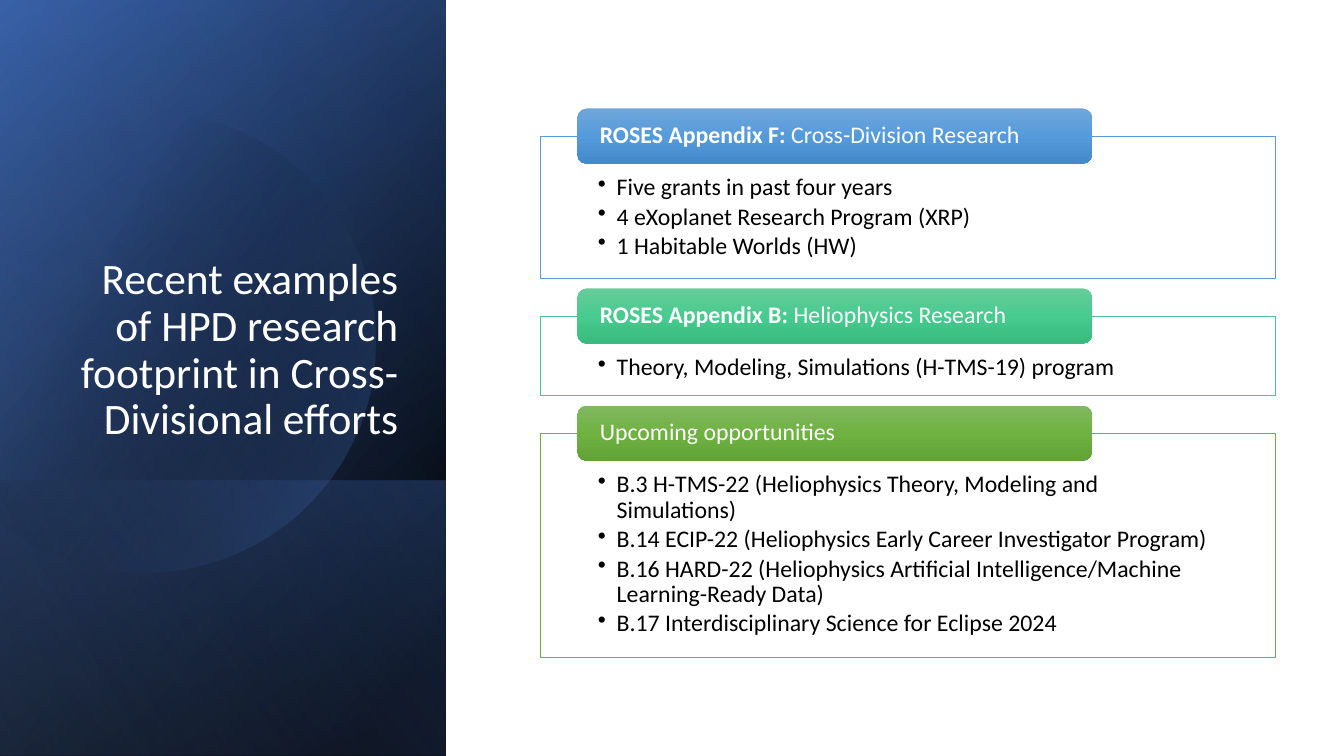
from dataclasses import dataclass
from math import acos, cos, sin

from lxml.etree import SubElement
from pptx import Presentation
from pptx.dml.color import RGBColor
from pptx.enum.shapes import MSO_SHAPE as Shape
from pptx.enum.text import MSO_ANCHOR as Anchor, MSO_AUTO_SIZE as AutoSize, PP_ALIGN as Align
from pptx.oxml.ns import qn
from pptx.util import Pt


@dataclass(frozen=True)
class Theme:
    font: str = "Calibri"
    title_size: float = 31
    text_size: float = 17
    white: str = "FFFFFF"
    black: str = "000000"
    navy: str = "2F5597"
    blue: str = "4472C4"
    pale_blue: str = "8FAADC"
    cross_division: tuple = ("5B9BD5", "71A6DB", "559BDB", "448ACA")
    heliophysics: tuple = ("4DC58D", "67CC9A", "47CB8E", "39BB7F")
    upcoming: tuple = ("70AD47", "81B861", "6FB242", "62A336")


theme = Theme()


def paint_gradient(shape, angle, stops):
    """Fill without outline; angle runs clockwise, stops are (percent, colour, opacity percent)."""
    shape.shadow.inherit = False
    shape.line.fill.background()
    shape.fill.gradient()
    shape.fill.gradient_angle = -angle % 360
    stop_list = shape._element.spPr.find(qn("a:gradFill")).find(qn("a:gsLst"))
    for old_stop in list(stop_list):
        stop_list.remove(old_stop)
    for percent, colour, opacity in stops:
        stop = SubElement(stop_list, qn("a:gs"), pos=str(percent * 1000))
        color = SubElement(stop, qn("a:srgbClr"), val=colour)
        if opacity < 100:
            SubElement(color, qn("a:alpha"), val=str(opacity * 1000))


def style_paragraph(paragraph, size, colour):
    paragraph.line_spacing = 0.9
    paragraph.font.name = theme.font
    paragraph.font.size = Pt(size)
    paragraph.font.color.rgb = RGBColor.from_string(colour)


prs = Presentation()
prs.slide_width, prs.slide_height = Pt(960), Pt(540)
slide = prs.slides.add_slide(prs.slide_layouts[5])
shapes = slide.shapes

# Side panel: layered gradients, with a disc cut off by the slide edge
PANEL_WIDTH = 318.5
FOOT_TOP = 343
panel_layers = [
    (0, 220, [(8, theme.black, 100), (100, theme.navy, 100)]),
    (0, 240, [(0, theme.black, 0), (99, theme.blue, 46)]),
    (FOOT_TOP, 140, [(2, theme.blue, 29), (100, theme.black, 30)]),
    "disc",
    (0, 150, [(0, theme.black, 0), (99, theme.pale_blue, 11)]),
]
DISC_X, DISC_Y, DISC_RADIUS, DISC_STEPS = 103, 244, 165, 120
edge_angle = acos(-DISC_X / DISC_RADIUS)
arc = [edge_angle * (2 * step / DISC_STEPS - 1) for step in range(DISC_STEPS + 1)]
disc_points = [(Pt(DISC_X + DISC_RADIUS * cos(a)), Pt(DISC_Y + DISC_RADIUS * sin(a))) for a in arc]

for layer in panel_layers:
    if layer == "disc":
        outline = shapes.build_freeform(*disc_points[0])
        outline.add_line_segments(disc_points[1:], close=True)
        paint_gradient(outline.convert_to_shape(), 30, [(29, theme.black, 0), (100, theme.blue, 43)])
    else:
        top, angle, stops = layer
        panel = shapes.add_shape(Shape.RECTANGLE, 0, Pt(top), Pt(PANEL_WIDTH), Pt(540 - top))
        paint_gradient(panel, angle, stops)

title = shapes.title
title.left, title.top, title.width, title.height = Pt(46), Pt(132.5), Pt(245.5), Pt(188.5)
title.text_frame.text = "Recent examples of HPD research footprint in Cross-Divisional efforts"
title.text_frame.word_wrap = True
title.text_frame.auto_size = AutoSize.NONE
title.text_frame.vertical_anchor = Anchor.BOTTOM
title_line = title.text_frame.paragraphs[0]
title_line.alignment = Align.RIGHT
style_paragraph(title_line, theme.title_size, theme.white)
shapes._spTree.append(title._element)  # bring in front of the panel

# Sections: framed list with a heading tab over its top edge
sections = [
    ("ROSES Appendix F:", " Cross-Division Research", theme.cross_division, 101.5, [
        "Five grants in past four years",
        "4 eXoplanet Research Program (XRP)",
        "1 Habitable Worlds (HW)",
    ]),
    ("ROSES Appendix B:", " Heliophysics Research", theme.heliophysics, 56.7, [
        "Theory, Modeling, Simulations (H-TMS-19) program",
    ]),
    ("", "Upcoming opportunities", theme.upcoming, 160.5, [
        "B.3 H-TMS-22 (Heliophysics Theory, Modeling and Simulations)",
        "B.14 ECIP-22 (Heliophysics Early Career Investigator Program)",
        "B.16 HARD-22 (Heliophysics Artificial Intelligence/Machine Learning-Ready Data)",
        "B.17 Interdisciplinary Science for Eclipse 2024",
    ]),
]
FRAME_LEFT, FRAME_WIDTH, FRAME_GAP = 386, 525, 27
TAB_LEFT, TAB_WIDTH, TAB_HEIGHT, TAB_RISE = 412.5, 367.5, 39.4, 19.7
BULLET_INDENT = Pt(13.5)

frame_top = 97.2
for bold_part, plain_part, (line_colour, *tab_colours), frame_height, items in sections:
    frame = shapes.add_shape(Shape.RECTANGLE, Pt(FRAME_LEFT), Pt(frame_top),
                             Pt(FRAME_WIDTH), Pt(frame_height))
    frame.shadow.inherit = False
    frame.fill.solid()
    frame.fill.fore_color.rgb = RGBColor.from_string(theme.white)
    frame.line.color.rgb = RGBColor.from_string(line_colour)
    frame.line.width = Pt(0.5)

    listing = frame.text_frame
    listing.word_wrap = True
    listing.vertical_anchor = Anchor.TOP
    listing.margin_left = listing.margin_right = Pt(41)
    listing.margin_top, listing.margin_bottom = Pt(28), Pt(9)
    listing.text = "\n".join(items)
    for item in listing.paragraphs:
        item.alignment = Align.LEFT
        item.space_after = Pt(2.5)
        style_paragraph(item, theme.text_size, theme.black)
        properties = item._p.get_or_add_pPr()
        properties.set("marL", str(BULLET_INDENT))
        properties.set("indent", str(-BULLET_INDENT))
        bullet = properties.makeelement(qn("a:buChar"), {"char": "•"})
        properties.find(qn("a:defRPr")).addprevious(bullet)

    tab = shapes.add_shape(Shape.ROUNDED_RECTANGLE, Pt(TAB_LEFT), Pt(frame_top - TAB_RISE),
                           Pt(TAB_WIDTH), Pt(TAB_HEIGHT))
    paint_gradient(tab, 90, [(pos, colour, 100) for pos, colour in zip((0, 50, 100), tab_colours)])
    tab.text_frame.word_wrap = True
    tab.text_frame.vertical_anchor = Anchor.MIDDLE
    tab.text_frame.margin_left = tab.text_frame.margin_right = Pt(14)
    tab.text_frame.margin_top = tab.text_frame.margin_bottom = 0
    heading = tab.text_frame.paragraphs[0]
    heading.alignment = Align.LEFT
    style_paragraph(heading, theme.text_size, theme.white)
    if bold_part:
        appendix = heading.add_run()
        appendix.text = bold_part
        appendix.font.bold = True
    heading.add_run().text = plain_part

    frame_top += frame_height + FRAME_GAP

prs.save("out.pptx")
